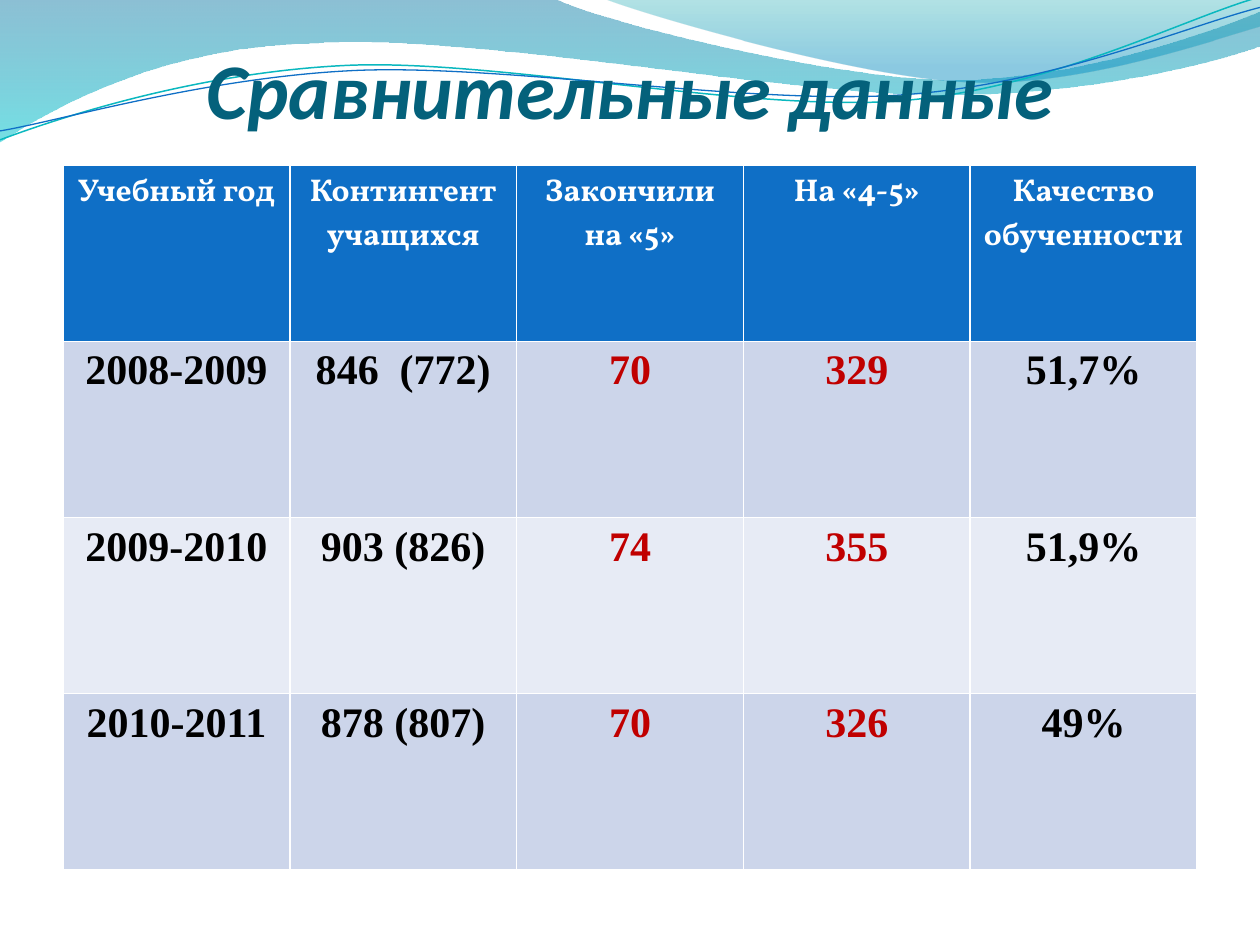
from dataclasses import dataclass
from typing import Optional

from lxml import etree
from pptx import Presentation
from pptx import util as u
from pptx.dml.color import RGBColor
from pptx.enum import text
from pptx.oxml import ns

Point = tuple[float, float]
WHITE, BLUE, BLACK, RED = "FFFFFF", "0F6FC6", "000000", "C00000"
LINE_TILT = -2.7  # degrees


@dataclass
class Stop:
    position: float
    color: str
    opacity: int  # percent


@dataclass
class Wave:
    """Outline in cm: a segment holds one point (line) or three (Bezier)."""
    start: Point
    segments: list[list[Point]]
    stops: Optional[list[Stop]] = None
    line: Optional[str] = None
    width: float = 0


@dataclass
class Style:
    font: str
    size: float
    color: str
    italic: bool = False


WAVES = [
    Wave((0, 0), [
        [(11.18, -0.03)],
        [(12.09, 0.43), (16.87, 1.6), (19.25, 1.6)],
        [(21.67, 1.6), (24.33, 0.66), (25.4, 0.23)],
        [(25.43, 0.91)],
        [(24.97, 1.12), (22.1, 1.93), (18.95, 1.91)],
        [(15.8, 1.91), (9.7, 0.71), (6.53, 0.86)],
        [(3.28, 0.91), (1.17, 2.11), (-0.03, 2.87)],
        [(0, 0)],
    ], stops=[Stop(0, "0074A1", 45), Stop(1, "00C6CF", 55)]),
    Wave((12.17, -0.03), [
        [(12.93, 0.28), (17.32, 1.57), (19.53, 1.65)],
        [(21.74, 1.75), (24.41, 0.81), (25.4, 0.53)],
        [(25.4, 0)],
        [(12.17, -0.03)],
    ], stops=[Stop(0, "00A1A9", 30), Stop(0.8, "008BBF", 45)]),
    Wave((-0.05, 2.22), [
        [(1.19, 1.82), (4.02, 1.04), (7.05, 1.05)],
        [(10.05, 1.07), (15.02, 2.37), (18.08, 2.29)],
        [(21.13, 2.2), (23.87, 0.91), (25.41, 0.55)],
    ], line="0AB8BF", width=0.85),
    Wave((-0.04, 2.04), [
        [(1.16, 1.9), (4.18, 1.15), (7.2, 1.16)],
        [(10.25, 1.18), (15.13, 2.25), (18.18, 2.17)],
        [(21.21, 2.1), (23.93, 1.06), (25.45, 0.75)],
    ], line=BLUE, width=0.75),
]

ROWS = [
    ["Учебный год", "Контингент учащихся", "Закончили на «5»", "На «4-5»", "Качество обученности"],
    ["2008-2009", "846  (772)", "70", "329", "51,7%"],
    ["2009-2010", "903 (826)", "74", "355", "51,9%"],
    ["2010-2011", "878 (807)", "70", "326", "49%"],
]
ROW_FILLS = [BLUE, "CCD5EA", "E7EBF5", "CCD5EA"]
RED_COLUMNS = (2, 3)


def rgb(color: str) -> RGBColor:
    return RGBColor.from_string(color)


def curve(sp, segments: list[list[Point]]) -> None:
    """Bend the straight segments that have control points."""
    for ln, seg in zip(list(sp._element.iter(ns.qn("a:lnTo"))), segments):
        if len(seg) == 1:
            continue
        bezier = etree.Element(ns.qn("a:cubicBezTo"))
        for x, y in seg:
            etree.SubElement(bezier, ns.qn("a:pt"),
                             x=str(u.Cm(x) - sp.left), y=str(u.Cm(y) - sp.top))
        ln.getparent().replace(ln, bezier)


def draw_wave(s, wave: Wave) -> None:
    first, *rest = [(u.Cm(x), u.Cm(y))
                    for x, y in [wave.start] + [seg[-1] for seg in wave.segments]]
    builder = s.shapes.build_freeform(*first)
    builder.add_line_segments(rest, close=wave.stops is not None)
    sp = builder.convert_to_shape()
    curve(sp, wave.segments)
    sp.shadow.inherit = False
    if wave.stops is None:
        sp.rotation = LINE_TILT
        sp.fill.background()
        sp.line.color.rgb = rgb(wave.line)
        sp.line.width = u.Pt(wave.width)
        return
    sp.line.fill.background()
    sp.fill.gradient()
    sp.fill.gradient_angle = 270
    for target, stop in zip(sp.fill.gradient_stops, wave.stops):
        target.position = stop.position
        target.color.rgb = rgb(stop.color)
    for clr, stop in zip(sp._element.iter(ns.qn("a:srgbClr")), wave.stops):
        etree.SubElement(clr, ns.qn("a:alpha"), val=str(stop.opacity * 1000))


def write(tf, content: str, style: Style) -> None:
    p = tf.paragraphs[0]
    p.alignment = text.PP_ALIGN.CENTER
    r = p.add_run()
    r.text = content
    r.font.name, r.font.size = style.font, u.Pt(style.size)
    r.font.bold, r.font.italic = True, style.italic
    r.font.color.rgb = rgb(style.color)


def draw_title(s, content: str) -> None:
    tf = s.shapes.add_textbox(u.Cm(1.27), u.Cm(0.91), u.Cm(22.86), u.Cm(1.82)).text_frame
    tf.word_wrap = True
    tf.vertical_anchor = text.MSO_ANCHOR.BOTTOM
    tf.margin_left = tf.margin_right = tf.margin_bottom = 0
    write(tf, content, Style("Calibri", 45, "04617B", italic=True))


def draw_table(s) -> None:
    # The default table style supplies the white rules
    table = s.shapes.add_table(len(ROWS), len(ROWS[0]), u.Cm(1.27), u.Cm(3.33),
                               u.Cm(22.86), u.Cm(14.2)).table
    for i, row in enumerate(ROWS):
        for j, content in enumerate(row):
            cell = table.cell(i, j)
            cell.fill.solid()
            cell.fill.fore_color.rgb = rgb(ROW_FILLS[i])
            if i == 0:
                style = Style("Vollkorn", 18, WHITE)
            else:
                style = Style("Times New Roman", 24, RED if j in RED_COLUMNS else BLACK)
            write(cell.text_frame, content, style)


def main() -> None:
    prs = Presentation()
    prs.slide_width, prs.slide_height = u.Cm(25.4), u.Cm(19.05)
    s = prs.slides.add_slide(prs.slide_layouts[6])
    # Wavy header
    for wave in WAVES:
        draw_wave(s, wave)
    # Title and figures
    draw_title(s, "Сравнительные данные")
    draw_table(s)
    prs.save("out.pptx")


if __name__ == "__main__":
    main()
